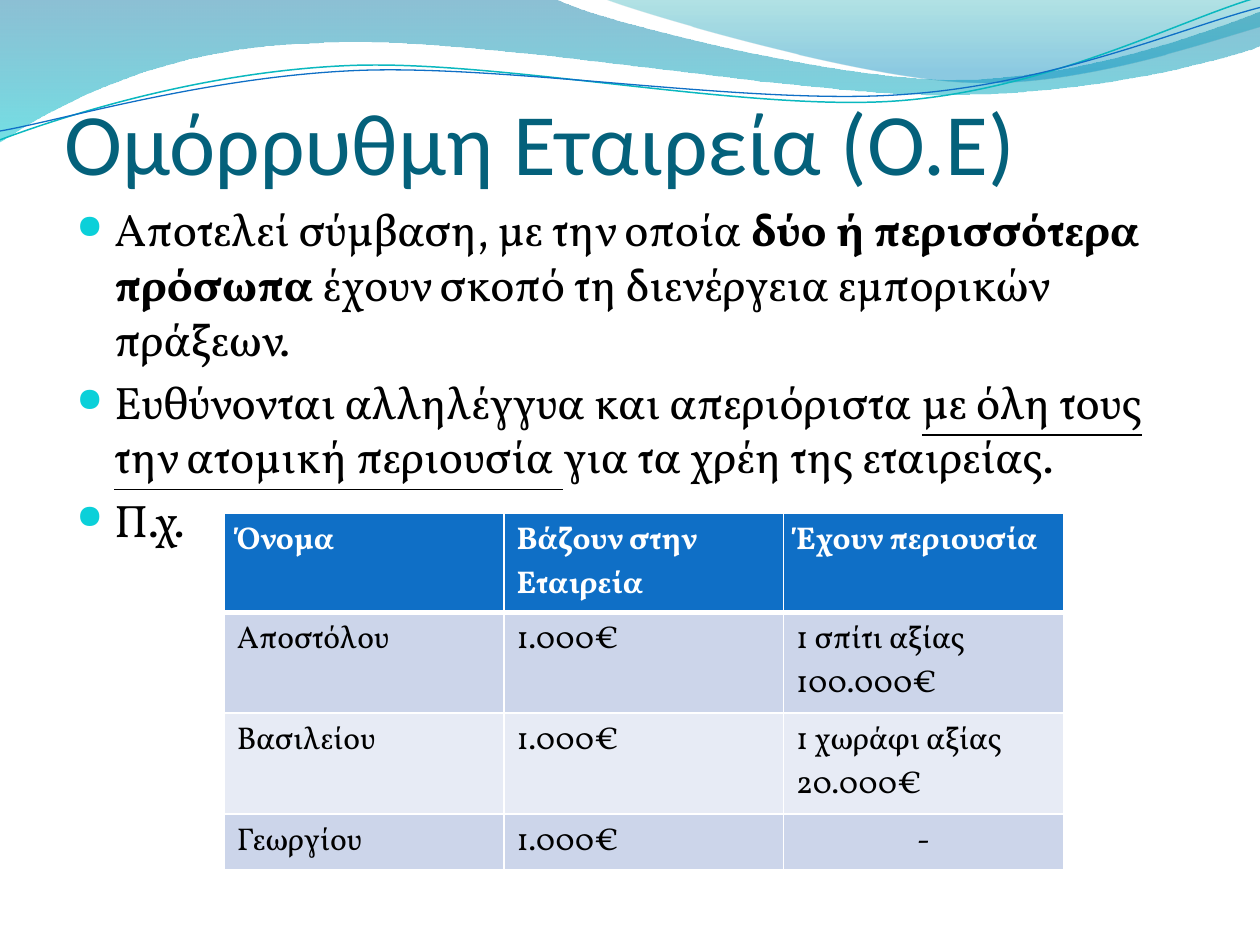
from math import cos, radians, sin

from lxml import etree
from pptx import Presentation
from pptx.dml.color import RGBColor
from pptx.enum.text import MSO_ANCHOR, PP_ALIGN
from pptx.oxml import parse_xml
from pptx.oxml.ns import nsdecls, qn
from pptx.util import Inches, Pt

BLACK = RGBColor(0x00, 0x00, 0x00)
WHITE = RGBColor(0xFF, 0xFF, 0xFF)
TITLE = RGBColor(0x04, 0x61, 0x7B)
BLUE = RGBColor(0x0F, 0x6F, 0xC6)
TEAL = RGBColor(0x0A, 0xB8, 0xBF)
BULLET = RGBColor(0x0B, 0xD0, 0xD9)
BAND_DARK = RGBColor(0xCC, 0xD5, 0xEA)
BAND_LIGHT = RGBColor(0xE7, 0xEB, 0xF5)
WAVE_BLUE = RGBColor(0x00, 0x74, 0xA1)
WAVE_CYAN = RGBColor(0x00, 0xC6, 0xCF)
CREST_TEAL = RGBColor(0x00, 0xA1, 0xA9)
CREST_BLUE = RGBColor(0x00, 0x8B, 0xBF)
TILT = 2.7


def add_run(p, text, size=26, font="Vollkorn", color=BLACK, bold=False, underline=False):
    r = p.add_run()
    r.text = text
    r.font.size = Pt(size)
    r.font.name = font
    r.font.color.rgb = color
    r.font.bold = bold
    r.font.underline = underline


def add_curve(s, start, segments, close):
    emu = [(Inches(x), Inches(y)) for x, y in [start, *sum(segments, [])]]
    builder = s.shapes.build_freeform(*emu[0])
    builder.add_line_segments(emu[1:], close=close)
    sp = builder.convert_to_shape()
    sp.shadow.inherit = False
    lines = iter(list(sp.element.iter(qn("a:lnTo"))))
    for seg in segments:
        group = [next(lines) for _ in seg]
        if len(seg) == 3:
            bezier = etree.Element(qn("a:cubicBezTo"))
            group[0].addprevious(bezier)
            for line in group:
                bezier.append(line[0])
                line.getparent().remove(line)
    return sp


prs = Presentation()
prs.slide_width, prs.slide_height = Inches(10), Inches(7.5)
s = prs.slides.add_slide(prs.slide_layouts[6])

waves = [
    ((0, 0), [[(4.4, -0.01)],
              [(4.76, 0.17), (6.64, 0.63), (7.58, 0.63)],
              [(8.53, 0.63), (9.58, 0.26), (10, 0.09)],
              [(10.01, 0.36)],
              [(9.83, 0.44), (8.7, 0.76), (7.46, 0.75)],
              [(6.22, 0.75), (3.82, 0.28), (2.57, 0.34)],
              [(1.29, 0.36), (0.46, 0.83), (-0.01, 1.13)]],
     [(0, WAVE_BLUE, 45), (100, WAVE_CYAN, 55)]),
    ((4.79, -0.01), [[(5.09, 0.11), (6.82, 0.62), (7.69, 0.65)],
                     [(8.56, 0.69), (9.61, 0.32), (10, 0.21)],
                     [(10, 0)]],
     [(0, CREST_TEAL, 30), (80, CREST_BLUE, 45)]),
]
for start, segments, stops in waves:
    sp = add_curve(s, start, segments, True)
    sp.line.fill.background()
    stop_xml = "".join(
        f'<a:gs pos="{pos * 1000}"><a:srgbClr val="{color}"><a:alpha val="{alpha * 1000}"/></a:srgbClr></a:gs>'
        for pos, color, alpha in stops)
    gradient = parse_xml(f'<a:gradFill {nsdecls("a")} rotWithShape="1"><a:gsLst>{stop_xml}</a:gsLst>'
                         '<a:lin ang="5400000" scaled="0"/></a:gradFill>')
    sp.element.spPr.find(qn("a:custGeom")).addnext(gradient)

strands = [
    ((0, 1.11), [[(0.48, 0.93), (1.58, 0.57), (2.77, 0.52)],
                 [(3.95, 0.47), (5.93, 0.89), (7.13, 0.8)],
                 [(8.33, 0.71), (9.38, 0.15), (9.98, -0.02)]], (4.99, 0.58), TEAL, 0.85),
    ((0, 1.04), [[(0.47, 0.96), (1.64, 0.61), (2.83, 0.56)],
                 [(4.03, 0.51), (5.97, 0.84), (7.17, 0.75)],
                 [(8.36, 0.67), (9.41, 0.21), (10, 0.06)]], (5, 0.59), BLUE, 0.75),
]
c, d = cos(radians(TILT)), sin(radians(TILT))
for start, segments, (cx, cy), color, width in strands:
    level = [[(cx + (x - cx) * c - (y - cy) * d, cy + (x - cx) * d + (y - cy) * c) for x, y in seg]
             for seg in [[start], *segments]]
    sp = add_curve(s, level[0][0], level[1:], False)
    sp.rotation = 360 - TILT
    sp.fill.background()
    sp.line.color.rgb = color
    sp.line.width = Pt(width)

tf = s.shapes.add_textbox(Inches(0.51), Inches(0.6), Inches(9), Inches(0.93)).text_frame
tf.word_wrap = True
tf.vertical_anchor = MSO_ANCHOR.BOTTOM
tf.margin_left = tf.margin_right = tf.margin_bottom = 0
add_run(tf.paragraphs[0], "Ομόρρυθμη Εταιρεία (Ο.Ε)", size=50, font="Calibri", color=TITLE)

bullets = [
    [("Αποτελεί σύμβαση, με την οποία ", {}),
     ("δύο ή περισσότερα πρόσωπα ", {"bold": True}),
     ("έχουν σκοπό τη διενέργεια εμπορικών πράξεων.", {})],
    [("Ευθύνονται αλληλέγγυα και απεριόριστα ", {}),
     ("με όλη τους την ατομική περιουσία ", {"underline": True}),
     ("για τα χρέη της εταιρείας.", {})],
    [("Π.χ.", {})],
]
tf = s.shapes.add_textbox(Inches(0.51), Inches(1.55), Inches(9), Inches(4.8)).text_frame
tf.word_wrap = True
for i, runs in enumerate(bullets):
    p = tf.add_paragraph() if i else tf.paragraphs[0]
    p.space_before = Pt(5 if i else 0)
    pPr = p._p.get_or_add_pPr()
    pPr.set("marL", str(Inches(0.3)))
    pPr.set("indent", str(Inches(-0.3)))
    color = etree.SubElement(pPr, qn("a:buClr"))
    etree.SubElement(color, qn("a:srgbClr"), val=str(BULLET))
    etree.SubElement(pPr, qn("a:buSzPct"), val="73000")
    etree.SubElement(pPr, qn("a:buChar"), char="●")
    for text, style in runs:
        add_run(p, text, **style)

rows = [
    (("Όνομα", "Βάζουν στην Εταιρεία", "Έχουν περιουσία"), BLUE, 0.79),
    (("Αποστόλου", "1.000€", "1 σπίτι αξίας 100.000€"), BAND_DARK, 0.8),
    (("Βασιλείου", "1.000€", "1 χωράφι αξίας 20.000€"), BAND_LIGHT, 0.8),
    (("Γεωργίου", "1.000€", "-"), BAND_DARK, 0.44),
]
height = sum(row[2] for row in rows)
table = s.shapes.add_table(len(rows), 3, Inches(1.78), Inches(4.07), Inches(6.66), Inches(height)).table
for col in table.columns:
    col.width = Inches(2.22)
for i, (texts, fill, row_height) in enumerate(rows):
    table.rows[i].height = Inches(row_height)
    header = i == 0
    for j, text in enumerate(texts):
        cell = table.cell(i, j)
        tcPr = cell._tc.get_or_add_tcPr()
        widths = {"lnL": 1, "lnR": 1, "lnT": 3 if i == 1 else 1, "lnB": 3 if header else 1}
        for tag, width in widths.items():
            ln = etree.SubElement(tcPr, qn(f"a:{tag}"), w=str(Pt(width)))
            solid = etree.SubElement(ln, qn("a:solidFill"))
            etree.SubElement(solid, qn("a:srgbClr"), val=str(WHITE))
        cell.fill.solid()
        cell.fill.fore_color.rgb = fill
        p = cell.text_frame.paragraphs[0]
        if text == "-":
            p.alignment = PP_ALIGN.CENTER
        add_run(p, text, size=18, color=WHITE if header else BLACK, bold=header)

prs.save("out.pptx")
